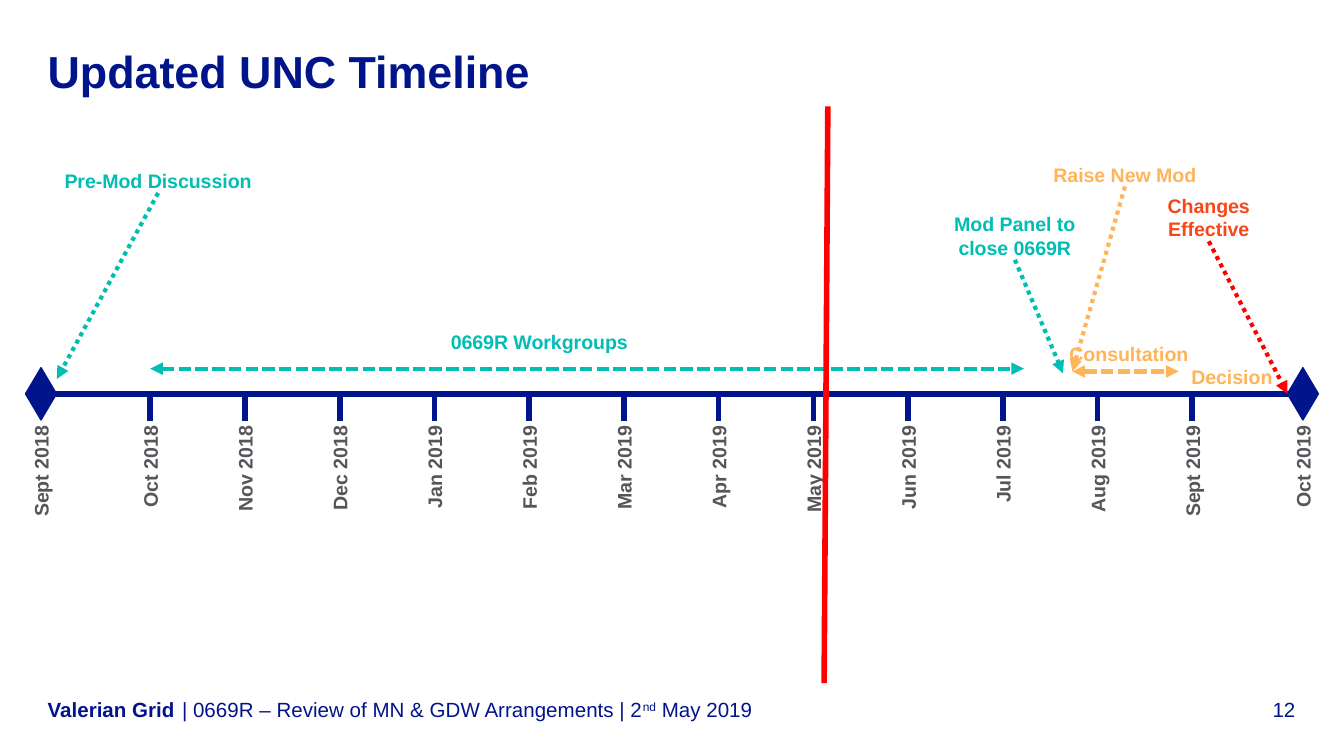
from dataclasses import dataclass

from lxml.etree import SubElement
from pptx import Presentation
from pptx.dml.color import RGBColor
from pptx.enum.dml import MSO_LINE as Dash
from pptx.enum.shapes import MSO_CONNECTOR as Connector, MSO_SHAPE as Shape
from pptx.enum.text import MSO_ANCHOR as Anchor, PP_ALIGN as Align
from pptx.oxml.ns import qn
from pptx.util import Pt


@dataclass(frozen=True)
class Theme:
    font: str = "Arial"
    navy: str = "00148C"
    grey: str = "55555A"
    teal: str = "00BEB4"
    amber: str = "FFB45A"
    orange: str = "FA4616"
    red: str = "FF0000"
    title_size: float = 24
    label_size: float = 10.5
    footer_size: float = 11
    axis_width: float = 3
    arrow_width: float = 2.25


THEME = Theme()
TOP, LEFT, BOTTOM, RIGHT = range(4)
AXIS_Y = 211
FIRST_TICK, MONTH_STEP = 80.5, 50.75
START_X, END_X = 22, 698
MONTHS = ["Oct 2018", "Nov 2018", "Dec 2018", "Jan 2019", "Feb 2019", "Mar 2019",
          "Apr 2019", "May 2019", "Jun 2019", "Jul 2019", "Aug 2019", "Sept 2019"]


def add_run(paragraph, text, *, size, color, bold=False, superscript=False):
    run = paragraph.add_run()
    run.text = text
    font = run.font
    font.name, font.size, font.bold = THEME.font, Pt(size), bold
    font.color.rgb = RGBColor.from_string(color)
    if superscript:
        run._r.get_or_add_rPr().set("baseline", "30000")


class TimelineSlide:
    def __init__(self, presentation, theme):
        self.theme = theme
        self.slide = presentation.slides.add_slide(presentation.slide_layouts[5])
        self.shapes = self.slide.shapes

    def frame(self, shape, anchor, align):
        """Remove the margins, set the alignment and return the first paragraph."""
        frame = shape.text_frame
        frame.margin_left = frame.margin_right = frame.margin_top = frame.margin_bottom = 0
        frame.word_wrap = True
        frame.vertical_anchor = anchor
        paragraph = frame.paragraphs[0]
        paragraph.alignment = align
        return paragraph

    def title(self, text, left, top, width, height):
        shape = self.shapes.title
        shape.left, shape.top, shape.width, shape.height = map(Pt, (left, top, width, height))
        paragraph = self.frame(shape, Anchor.MIDDLE, Align.LEFT)
        add_run(paragraph, text, size=self.theme.title_size, color=self.theme.navy, bold=True)

    def label(self, text, left, top, width, color, height=12.7, align=Align.CENTER):
        shape = self.shapes.add_textbox(Pt(left), Pt(top), Pt(width), Pt(height))
        paragraph = self.frame(shape, Anchor.TOP, align)
        add_run(paragraph, text, size=self.theme.label_size, color=color, bold=True)
        return shape

    def month(self, text, center):
        """Add a label that reads upwards and ends just below the axis."""
        width = 86.4
        shape = self.label(text, center - width / 2, 265, width, self.theme.grey,
                           align=Align.RIGHT)
        shape.rotation = 270

    def footer(self, runs, left, width, align=Align.LEFT):
        shape = self.shapes.add_textbox(Pt(left), Pt(373), Pt(width), Pt(13.5))
        paragraph = self.frame(shape, Anchor.BOTTOM, align)
        for text, style in runs:
            add_run(paragraph, text, size=self.theme.footer_size, color=self.theme.navy, **style)

    def diamond(self, center):
        width, height = 16.6, 28
        shape = self.shapes.add_shape(Shape.FLOWCHART_SORT, Pt(center - width / 2),
                                      Pt(AXIS_Y - height / 2), Pt(width), Pt(height))
        shape.shadow.inherit = False
        shape.fill.solid()
        shape.fill.fore_color.rgb = RGBColor.from_string(self.theme.navy)
        shape.line.color.rgb = RGBColor.from_string(self.theme.navy)
        shape.line.width = Pt(0.75)
        return shape

    def line(self, start, end, color, width=THEME.axis_width, dash=None, arrows=()):
        connector = self.shapes.add_connector(Connector.STRAIGHT, *map(Pt, (*start, *end)))
        line = connector.line
        line.color.rgb = RGBColor.from_string(color)
        line.width = Pt(width)
        if dash:
            line.dash_style = dash
        for arrow in arrows:
            SubElement(line._get_or_add_ln(), qn(f"a:{arrow}")).set("type", "triangle")
        SubElement(connector._element.spPr, qn("a:effectLst"))
        return connector

    def span(self, start_x, end_x, y, color):
        """Add a dashed arrow with two heads for a period of time."""
        self.line((start_x, y), (end_x, y), color, self.theme.arrow_width,
                  Dash.SQUARE_DOT, ("headEnd", "tailEnd"))

    def pointer(self, label, end, color):
        """Add a dotted arrow from the bottom of a label to a point on the timeline."""
        start = (label.left.pt + label.width.pt / 2, label.top.pt + label.height.pt)
        connector = self.line(start, end, color, self.theme.arrow_width,
                              Dash.ROUND_DOT, ("tailEnd",))
        connector.begin_connect(label, BOTTOM)
        return connector


def main():
    presentation = Presentation()
    presentation.slide_width, presentation.slide_height = Pt(720), Pt(405)
    timeline = TimelineSlide(presentation, THEME)
    navy, teal, amber = THEME.navy, THEME.teal, THEME.amber

    timeline.title("Updated UNC Timeline", 25.5, 21, 461.5, 34)

    timeline.line((29, AXIS_Y), (691, AXIS_Y), navy)
    timeline.diamond(START_X)
    end_diamond = timeline.diamond(END_X)
    timeline.month("Sept 2018", START_X)
    timeline.month("Oct 2019", END_X)
    for index, month in enumerate(MONTHS):
        x = FIRST_TICK + index * MONTH_STEP
        timeline.line((x, AXIS_Y), (x, AXIS_Y + 14.4), navy)
        timeline.month(month, x)

    timeline.span(FIRST_TICK, 548.5, 197.5, teal)
    timeline.label("0669R Workgroups", 177, 176.5, 224, teal)
    discussion = timeline.label("Pre-Mod Discussion", 16, 90.7, 137.5, teal)
    timeline.pointer(discussion, (30.5, 203), teal)
    panel = timeline.label("Mod Panel to close 0669R", 499.7, 113.8, 88, teal, height=25.4)
    timeline.pointer(panel, (569.5, 200), teal)

    new_mod = timeline.label("Raise New Mod", 554.4, 87.2, 96.5, amber)
    timeline.pointer(new_mod, (574.5, 199), amber)
    timeline.span(574.5, 631.5, 199, amber)
    timeline.label("Consultation", 556.6, 183, 96.5, amber)

    changes = timeline.label("Changes Effective", 615.6, 103.9, 64, THEME.orange, height=25.4)
    timeline.line((443.5, 57), (441.5, 366), THEME.red)
    effective = timeline.pointer(changes, (END_X, AXIS_Y), THEME.red)
    effective.end_connect(end_diamond, LEFT)
    timeline.label("Decision", 628, 195.7, 64, amber)

    timeline.footer([("Valerian Grid", {"bold": True})], 25.5, 74)
    timeline.footer([("| 0669R – Review of MN & GDW Arrangements | 2", {}),
                     ("nd", {"superscript": True}),
                     (" May 2019", {})], 97.5, 550)
    timeline.footer([("12", {})], 652.5, 41.5, Align.RIGHT)

    presentation.save("out.pptx")


if __name__ == "__main__":
    main()
